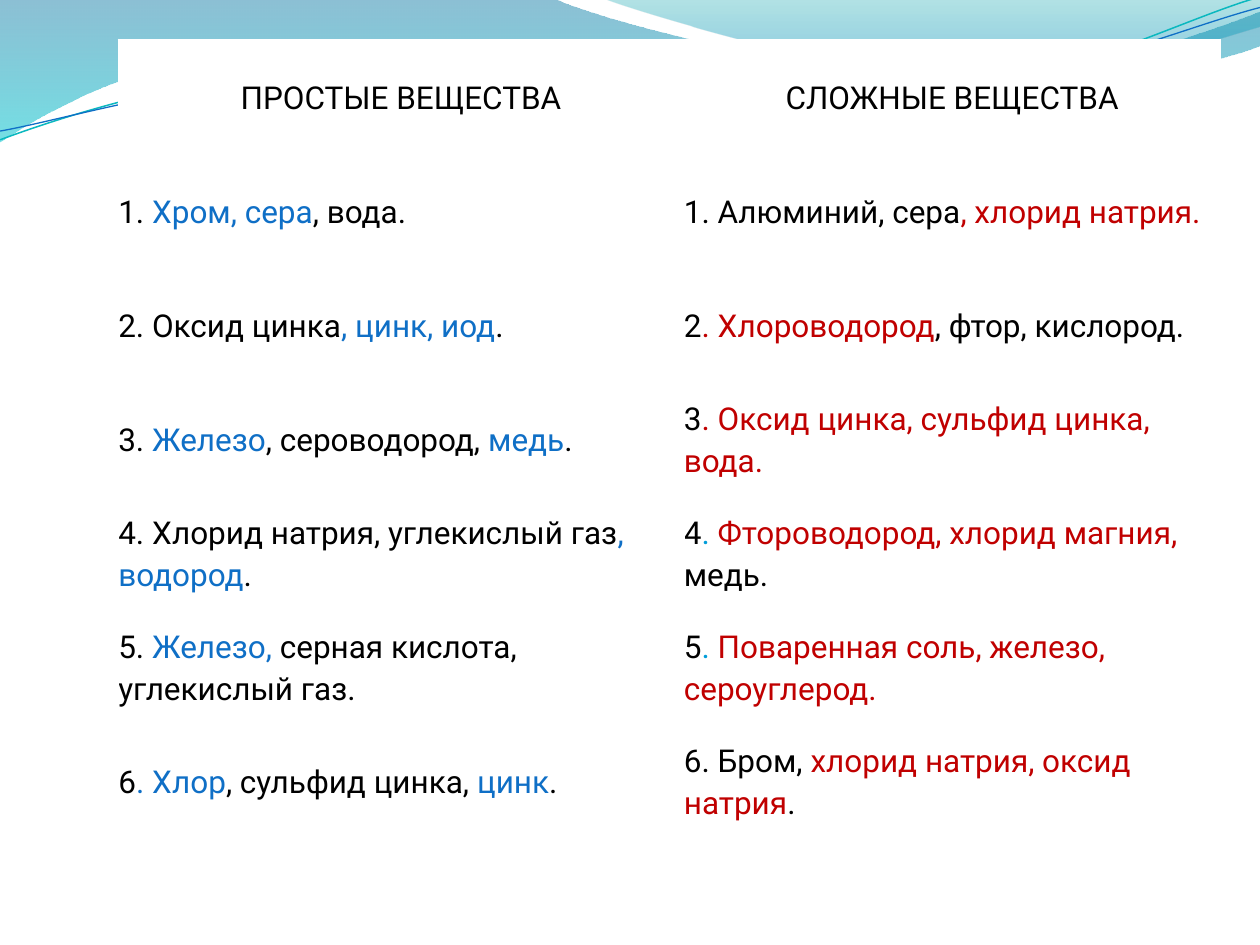
import math

from pptx import Presentation
from pptx import util as u
from pptx.dml.color import RGBColor
from pptx.enum import text
from pptx.oxml.ns import qn
from lxml import etree

BLACK, BLUE, RED, CYAN, WHITE = "000000", "0F6FC6", "C00000", "009DD9", "FFFFFF"

UPPER_WAVE = [
    (0, 0), (316.8, -0.7),
    (342.7, 12.2, 478.1, 45.4, 545.8, 45.4),
    (614.2, 45.4, 689.8, 18.7, 720, 6.5),
    (720.7, 25.9),
    (707.8, 31.7, 626.4, 54.7, 537.1, 54),
    (447.8, 54, 275, 20.2, 185, 24.5),
    (92.9, 25.9, 33.1, 59.8, -0.7, 81.4),
    (0, 0),
]
RIGHT_WAVE = [
    (344.9, -0.7),
    (366.5, 7.9, 491, 44.6, 553.7, 46.8),
    (616.3, 49.7, 691.9, 23, 720, 15.1),
    (720, 0),
    (344.9, -0.7),
]
TEAL_LINE = [
    (0, 79.9),
    (34.6, 67, 113.8, 41, 199.4, 37.4),
    (284.4, 33.8, 427, 64.1, 513.4, 57.6),
    (599.8, 51.1, 675.4, 10.8, 718.6, -1.4),
]
BLUE_LINE = [
    (0, 74.9),
    (33.8, 69.1, 118.1, 43.9, 203.8, 40.3),
    (290.2, 36.7, 429.8, 60.5, 516.2, 54),
    (601.9, 48.2, 677.5, 15.1, 720, 4.3),
]
LINE_TILT = -2.7

ROWS = [
    ([("ПРОСТЫЕ ВЕЩЕСТВА", BLACK)], [("СЛОЖНЫЕ ВЕЩЕСТВА", BLACK)]),
    ([("1. ", BLACK), ("Хром, сера", BLUE), (", вода.", BLACK)],
     [("1. Алюминий, сера", BLACK), (", хлорид натрия.", RED)]),
    ([("2. Оксид цинка", BLACK), (", цинк, иод", BLUE), (".", BLACK)],
     [("2", BLACK), (". Хлороводород", RED), (", фтор, кислород.", BLACK)]),
    ([("3. ", BLACK), ("Железо", BLUE), (", сероводород, ", BLACK), ("медь", BLUE), (".", BLACK)],
     [("3", BLACK), (". Оксид цинка, сульфид цинка, вода.", RED)]),
    ([("4. Хлорид натрия, углекислый газ", BLACK), (", водород", BLUE), (".", BLACK)],
     [("4", BLACK), (". ", CYAN), ("Фтороводород, хлорид магния, ", RED), ("медь.", BLACK)]),
    ([("5. ", BLACK), ("Железо,", BLUE), (" серная кислота, углекислый газ.", BLACK)],
     [("5", BLACK), (". ", CYAN), ("Поваренная соль, железо, сероуглерод.", RED)]),
    ([("6", BLACK), (". Хлор", BLUE), (", сульфид цинка, ", BLACK), ("цинк", BLUE), (".", BLACK)],
     [("6. Бром, ", BLACK), ("хлорид натрия, оксид натрия", RED), (".", BLACK)]),
]


def colour(value):
    return RGBColor.from_string(value)


def pairs(segment):
    return list(zip(segment[::2], segment[1::2]))


def turn(segments, degrees, centre):
    cos, sin = math.cos(math.radians(degrees)), math.sin(math.radians(degrees))
    cx, cy = centre
    return [
        [value for x, y in pairs(segment) for value in (
            cx + (x - cx) * cos - (y - cy) * sin,
            cy + (x - cx) * sin + (y - cy) * cos)]
        for segment in segments]


class SlideWriter:
    font = "Roboto"
    size = 18
    line_spacing = 1.15
    space_after = 15

    def __init__(self, slide):
        self.slide = slide

    def outline(self, shapes, segments, close):
        anchors = [(u.Pt(segment[-2]), u.Pt(segment[-1])) for segment in segments]
        builder = shapes.build_freeform(*anchors[0])
        builder.add_line_segments(anchors[1:], close=close)
        shape = builder.convert_to_shape()
        shape.shadow.inherit = False
        edges = list(shape._element.iter(qn("a:lnTo")))
        for edge, segment in zip(edges, segments[1:]):
            if len(segment) == 6:
                edge.tag = qn("a:cubicBezTo")
                for index, (x, y) in enumerate(pairs(segment)[:2]):
                    handle = etree.Element(qn("a:pt"), x=str(u.Pt(x) - shape.left),
                                           y=str(u.Pt(y) - shape.top))
                    edge.insert(index, handle)
        return shape

    def wave(self, segments, stops):
        shape = self.outline(self.slide.shapes, segments, True)
        shape.line.fill.background()
        shape.fill.gradient()
        shape.fill.gradient_angle = 270
        for stop, (position, value, _) in zip(shape.fill.gradient_stops, stops):
            stop.position = position
            stop.color.rgb = colour(value)
        for node, (_, _, opacity) in zip(shape._element.iter(qn("a:srgbClr")), stops):
            etree.SubElement(node, qn("a:alpha"), val=str(opacity * 1000))

    def curves(self, lines, centre):
        group = self.slide.shapes.add_group_shape()
        for segments, value, width in lines:
            level = turn(segments, -LINE_TILT, centre)
            shape = self.outline(group.shapes, level, False)
            shape.rotation = LINE_TILT
            shape.fill.background()
            shape.line.color.rgb = colour(value)
            shape.line.width = u.Pt(width)

    def table(self, left, top, widths, row_height, rows):
        frame = self.slide.shapes.add_table(
            len(rows), len(widths), u.Pt(left), u.Pt(top),
            u.Pt(sum(widths)), u.Pt(row_height * len(rows)))
        table = frame.table
        table.first_row = False
        table.horz_banding = False
        for column, width in zip(table.columns, widths):
            column.width = u.Pt(width)
        for index, row in enumerate(rows):
            table.rows[index].height = u.Pt(row_height)
            align = text.PP_ALIGN.LEFT if index else text.PP_ALIGN.CENTER
            for cell, spans in zip(table.rows[index].cells, row):
                self.cell(cell, spans, align)

    def cell(self, cell, spans, align):
        cell.fill.solid()
        cell.fill.fore_color.rgb = colour(WHITE)
        cell.margin_left = cell.margin_right = cell.margin_top = cell.margin_bottom = 0
        cell.vertical_anchor = text.MSO_ANCHOR.MIDDLE
        para = cell.text_frame.paragraphs[0]
        para.alignment = align
        para.line_spacing = self.line_spacing
        para.space_after = u.Pt(self.space_after)
        for words, value in spans:
            span = para.add_run()
            span.text = words
            span.font.name = self.font
            span.font.size = u.Pt(self.size)
            span.font.color.rgb = colour(value)


def main():
    deck = Presentation()
    deck.slide_width, deck.slide_height = u.Pt(720), u.Pt(540)
    writer = SlideWriter(deck.slides.add_slide(deck.slide_layouts[6]))
    writer.wave(UPPER_WAVE, [(0, "0074A1", 45), (1, "00C6CF", 55)])
    writer.wave(RIGHT_WAVE, [(0, "00A1A9", 30), (0.8, "008BBF", 45)])
    writer.curves([(TEAL_LINE, "0AB8BF", 0.85), (BLUE_LINE, BLUE, 0.75)], (359.5, 42))
    writer.table(67.6, 22.5, (323.2, 306.7), 65.12, ROWS)
    deck.save("out.pptx")


if __name__ == "__main__":
    main()
